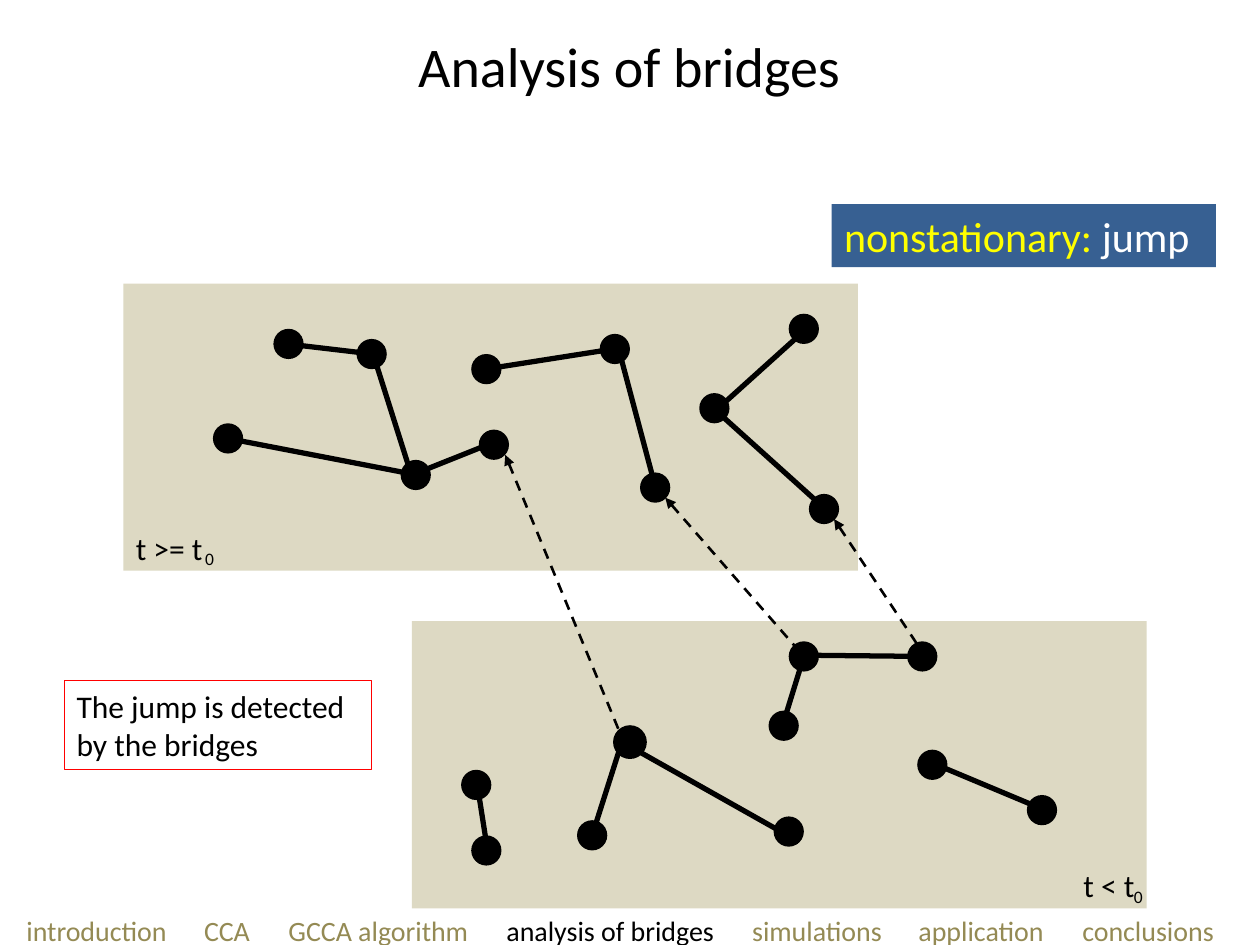
from lxml.etree import SubElement
from pptx import Presentation
from pptx.dml.color import RGBColor
from pptx.enum.dml import MSO_LINE
from pptx.enum.shapes import MSO_CONNECTOR, MSO_SHAPE
from pptx.enum.text import MSO_ANCHOR, PP_ALIGN
from pptx.oxml.ns import qn
from pptx.util import Inches, Pt

BLACK = RGBColor(0x00, 0x00, 0x00)
WHITE = RGBColor(0xFF, 0xFF, 0xFF)
BEIGE = RGBColor(0xDD, 0xD9, 0xC3)
RED = RGBColor(0xFF, 0x00, 0x00)
BLUE = RGBColor(0x37, 0x60, 0x92)
YELLOW = RGBColor(0xFF, 0xFF, 0x00)
OLIVE = RGBColor(0x94, 0x8A, 0x54)
FONT = "Calibri"
NODE_SIZE = 0.24

presentation = Presentation()
presentation.slide_width = Inches(10)
presentation.slide_height = Inches(7.5)
slide = presentation.slides.add_slide(presentation.slide_layouts[5])
shapes = slide.shapes


def add_filled(kind, left, top, width, height, fill=None):
    shape = shapes.add_shape(kind, Inches(left), Inches(top), Inches(width), Inches(height))
    shape.shadow.inherit = False
    if fill is None:
        shape.fill.background()
    else:
        shape.fill.solid()
        shape.fill.fore_color.rgb = fill
    shape.line.fill.background()
    return shape


def write(shape, runs, size, align=PP_ALIGN.LEFT, wrap=True):
    """Fill the shape's first paragraph with (text, colour) runs."""
    frame = shape.text_frame
    frame.word_wrap = wrap
    paragraph = frame.paragraphs[0]
    paragraph.alignment = align
    for text, colour in runs:
        run = paragraph.add_run()
        run.text = text
        run.font.color.rgb = colour
    paragraph.font.name = FONT
    paragraph.font.size = Pt(size)
    return paragraph


title = shapes.title
title.left, title.top, title.width, title.height = (
    Inches(3.2), Inches(0.2), Inches(3.59), Inches(0.64))
title.text_frame.vertical_anchor = MSO_ANCHOR.MIDDLE
write(title, [("Analysis of bridges", BLACK)], 32, PP_ALIGN.CENTER, wrap=False)

# Panels for the data before and after the jump
for left, top in [(3.27, 4.93), (0.98, 2.25)]:
    add_filled(MSO_SHAPE.RECTANGLE, left, top, 5.83, 2.28, BEIGE)

# Graph edges inside the panels, then the bridges between them
edges = [
    (5.08, 5.97, 6.34, 6.68), (4.91, 5.97, 4.69, 6.66), (3.92, 3.51, 3.27, 3.77),
    (2.98, 2.87, 3.3, 3.88), (2.28, 2.73, 2.96, 2.81), (6.21, 5.76, 6.38, 5.21),
    (7.34, 5.21, 6.38, 5.2), (8.27, 6.42, 7.41, 6.06), (3.87, 6.75, 3.79, 6.24),
    (5.2, 3.86, 4.91, 2.77), (6.55, 4.04, 5.75, 3.32), (6.4, 2.61, 5.69, 3.25),
    (4.87, 2.77, 3.85, 2.93), (3.31, 3.77, 1.81, 3.48),
]
bridges = [(4.01, 3.61, 5, 6.01), (6.62, 4.12, 7.33, 5.19), (5.28, 3.95, 6.38, 5.21)]
for ends in edges + bridges:
    connector = shapes.add_connector(MSO_CONNECTOR.STRAIGHT, *[Inches(end) for end in ends])
    SubElement(connector._element.spPr, qn("a:effectLst"))
    connector.line.color.rgb = BLACK
    connector.line.width = Pt(3)
    if ends in bridges:
        connector.line.width = Pt(1.5)
        connector.line.dash_style = MSO_LINE.DASH
        line = connector.line._get_or_add_ln()
        SubElement(line, qn("a:headEnd"), type="triangle")

# Graph nodes, by top left corner
nodes = [
    (4.58, 6.51), (6.14, 6.48), (3.74, 6.63), (8.15, 6.31), (3.8, 3.41), (3.18, 3.65),
    (2.83, 2.69), (2.17, 2.61), (6.26, 5.09), (6.1, 5.64), (3.66, 6.11), (7.2, 5.09),
    (7.28, 5.95), (5.08, 3.75), (6.42, 3.92), (5.55, 3.12), (4.76, 2.65), (3.74, 2.81),
    (6.26, 2.49), (1.69, 3.36),
]
for left, top in nodes:
    add_filled(MSO_SHAPE.OVAL, left, top, NODE_SIZE, NODE_SIZE, BLACK)
outlined_node = add_filled(MSO_SHAPE.OVAL, 4.88, 5.77, NODE_SIZE, NODE_SIZE, BLACK)
outlined_node.line.color.rgb = BLACK
outlined_node.line.width = Pt(2)

# Panel labels with their lowered zeros
for text, left, top, width, height, size in [
    ("t < t", 8.5, 6.82, 0.61, 0.71, 18),
    ("0", 8.9, 6.98, 0.27, 0.27, 10),
    ("t >= t", 0.98, 4.15, 0.74, 0.71, 18),
    ("0", 1.53, 4.3, 0.27, 0.27, 10),
]:
    label = shapes.add_textbox(Inches(left), Inches(top), Inches(width), Inches(height))
    write(label, [(text, BLACK)], size, wrap=False)

remark = add_filled(MSO_SHAPE.RECTANGLE, 0.51, 5.4, 2.44, 0.71)
remark.line.color.rgb = RED
remark.line.width = Pt(0.75)
write(remark, [("The jump is detected by the bridges", BLACK)], 18)

heading = add_filled(MSO_SHAPE.RECTANGLE, 6.6, 1.62, 3.05, 0.5, BLUE)
write(heading, [("nonstationary: ", YELLOW), ("jump", WHITE)], 24)

# Section bar: one line with a tab stop for each section after the first
first_section = 0.21
tab_stops = [1.62, 2.29, 4.02, 5.97, 7.29, 8.59]
section_bar = shapes.add_textbox(Inches(0), Inches(7.2), Inches(10), Inches(0.37))
section_bar.text_frame.margin_left = Inches(first_section)
tab_list = SubElement(section_bar.text_frame.paragraphs[0]._p.get_or_add_pPr(), qn("a:tabLst"))
for stop in tab_stops:
    SubElement(tab_list, qn("a:tab"), pos=str(Inches(stop - first_section)), algn="l")
write(section_bar, [
    ("introduction\tCCA\tGCCA algorithm\t", OLIVE),
    ("analysis of bridges\t", BLACK),
    ("simulations\tapplication\tconclusions", OLIVE),
], 16)

presentation.save("out.pptx")
